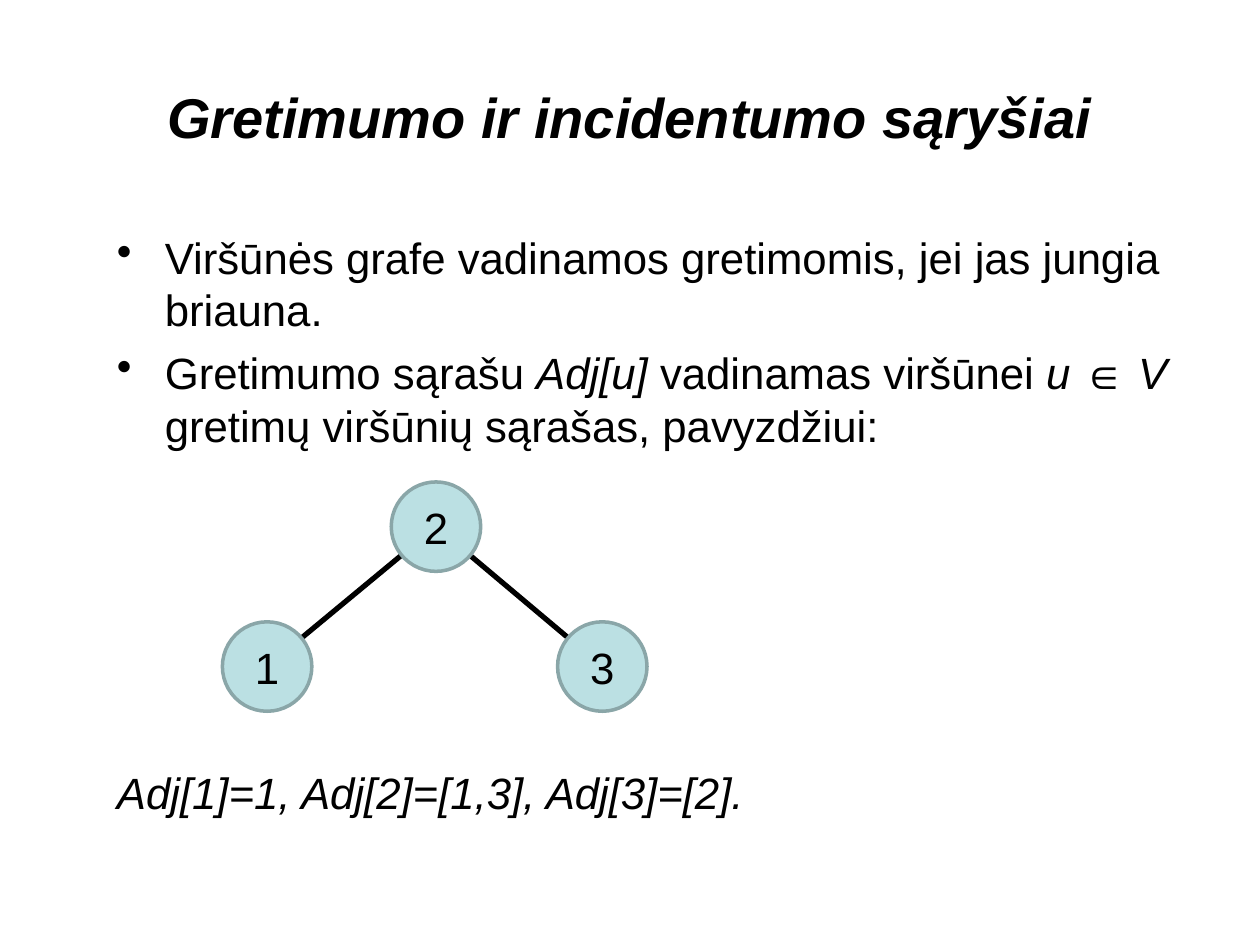
from dataclasses import dataclass

from lxml import etree
from pptx import Presentation
from pptx.dml.color import RGBColor
from pptx.enum.shapes import MSO_CONNECTOR, MSO_SHAPE
from pptx.enum.text import MSO_ANCHOR, PP_ALIGN
from pptx.oxml.ns import qn
from pptx.util import Inches, Pt


@dataclass(frozen=True)
class Theme:
    font: str = "Arial"
    ink: RGBColor = RGBColor(0x00, 0x00, 0x00)
    node_fill: RGBColor = RGBColor(0xBB, 0xE0, 0xE3)
    node_line: RGBColor = RGBColor(0x8A, 0xA6, 0xA8)
    title_size: Pt = Pt(32)
    body_size: Pt = Pt(25)
    paragraph_gap: Pt = Pt(6)
    diagram_gap: Pt = Pt(180)


theme = Theme()


def add_run(paragraph, text, size=theme.body_size, bold=False, italic=False):
    run = paragraph.add_run()
    run.text = text
    run.font.name = theme.font
    run.font.size = size
    run.font.bold = bold
    run.font.italic = italic
    run.font.color.rgb = theme.ink


presentation = Presentation()
presentation.slide_width = Inches(10)
presentation.slide_height = Inches(7.5)
slide = presentation.slides.add_slide(presentation.slide_layouts[6])

# Title
title = slide.shapes.add_textbox(Inches(0.5), Inches(0.3), Inches(9), Inches(1.25))
title.text_frame.word_wrap = True
title.text_frame.vertical_anchor = MSO_ANCHOR.MIDDLE
paragraph = title.text_frame.paragraphs[0]
paragraph.alignment = PP_ALIGN.CENTER
add_run(paragraph, "Gretimumo ir incidentumo sąryšiai", theme.title_size, bold=True, italic=True)

# Definitions, then the adjacency lists below the graph: (text, italic) runs
bullets = [
    [("Viršūnės grafe vadinamos gretimomis, jei jas jungia briauna.", False)],
    [
        ("Gretimumo sąrašu ", False),
        ("Adj[u] ", True),
        ("vadinamas viršūnei ", False),
        ("u ∈ V ", True),
        ("gretimų viršūnių sąrašas, pavyzdžiui:", False),
    ],
]
body = slide.shapes.add_textbox(Inches(0.83), Inches(1.78), Inches(8.89), Inches(4.95))
frame = body.text_frame
frame.word_wrap = True
for index, runs in enumerate(bullets):
    paragraph = frame.add_paragraph() if index else frame.paragraphs[0]
    if index:
        paragraph.space_before = theme.paragraph_gap
    properties = paragraph._p.get_or_add_pPr()
    properties.set("marL", str(Inches(0.38)))
    properties.set("indent", str(-Inches(0.38)))
    etree.SubElement(properties, qn("a:buChar")).set("char", "•")
    for text, italic in runs:
        add_run(paragraph, text, italic=italic)

paragraph = frame.add_paragraph()
paragraph.space_before = theme.diagram_gap
add_run(paragraph, "Adj[1]=1, Adj[2]=[1,3], Adj[3]=[2].", italic=True)

# Graph: node centres in inches; edges go first so the nodes cover their ends
nodes = {"1": (2.12, 5.29), "2": (3.46, 4.18), "3": (4.78, 5.29)}
edges = [("1", "2"), ("3", "2")]
diameter = 0.71

for start, end in edges:
    points = [Inches(value) for value in nodes[start] + nodes[end]]
    edge = slide.shapes.add_connector(MSO_CONNECTOR.STRAIGHT, *points)
    edge.line.color.rgb = theme.ink
    edge.line.width = Pt(3)
    etree.SubElement(edge._element.spPr, qn("a:effectLst"))

for label, (x, y) in nodes.items():
    node = slide.shapes.add_shape(
        MSO_SHAPE.OVAL,
        Inches(x - diameter / 2), Inches(y - diameter / 2),
        Inches(diameter), Inches(diameter),
    )
    node.shadow.inherit = False
    node.fill.solid()
    node.fill.fore_color.rgb = theme.node_fill
    node.line.color.rgb = theme.node_line
    node.line.width = Pt(2)
    node.text_frame.vertical_anchor = MSO_ANCHOR.MIDDLE
    paragraph = node.text_frame.paragraphs[0]
    paragraph.alignment = PP_ALIGN.CENTER
    add_run(paragraph, label)

presentation.save("out.pptx")
